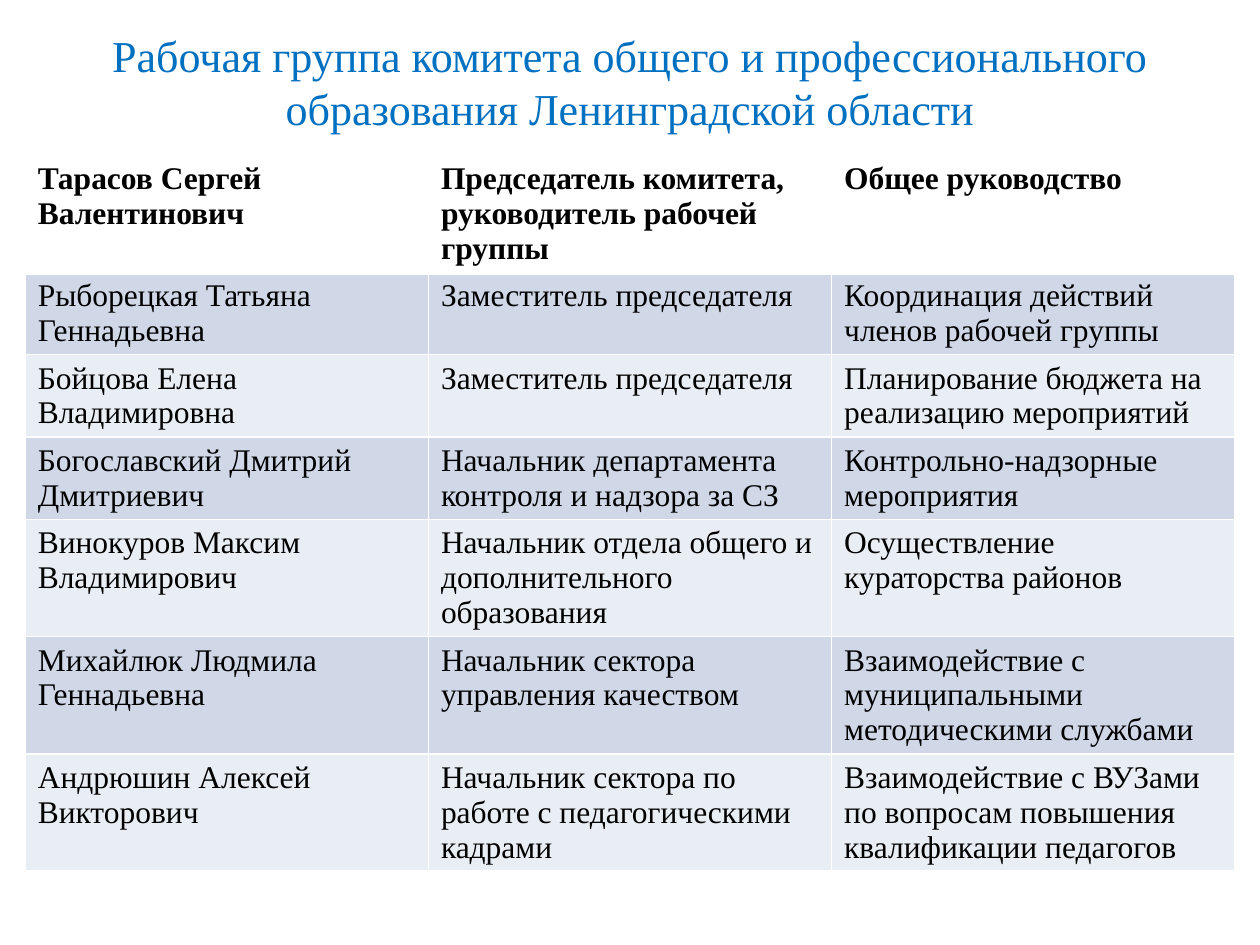
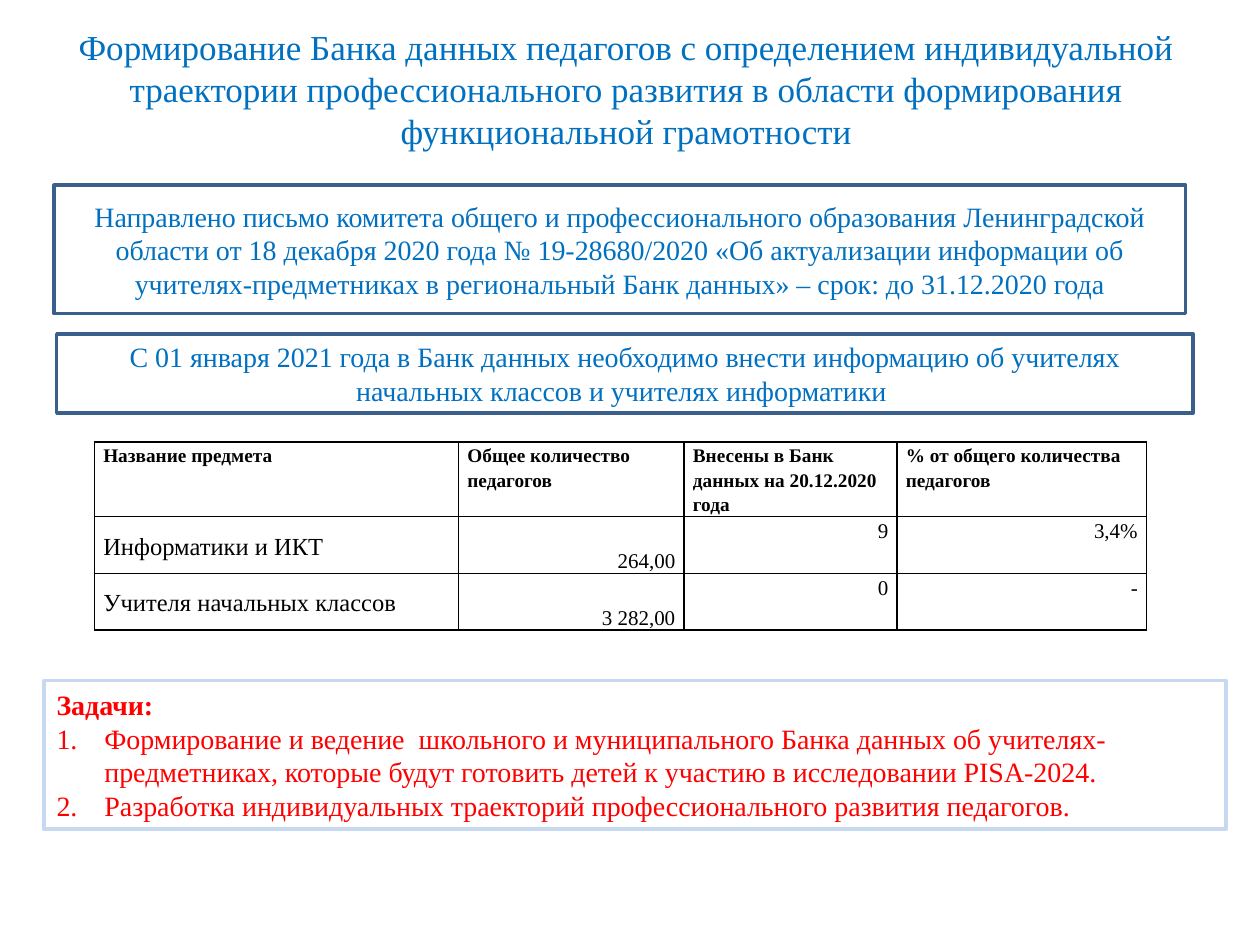
from dataclasses import dataclass

from lxml.etree import SubElement
from pptx import Presentation
from pptx.dml.color import RGBColor as RGB
from pptx.enum.shapes import MSO_SHAPE as Shape
from pptx.enum.text import MSO_ANCHOR as Anchor, PP_ALIGN as Align
from pptx.oxml.ns import qn
from pptx.util import Inches, Pt


@dataclass(frozen=True)
class Theme:
    """Colours, font and type sizes of the deck."""
    font: str = "Times New Roman"
    blue: str = "0070C0"
    edge: str = "3A5F8C"
    pale: str = "C6D9F1"
    red: str = "FF0000"
    black: str = "000000"
    white: str = "FFFFFF"
    bands: tuple = ("E9EDF4", "D0D8E8")
    title: float = 25.2
    long: float = 20
    body: float = 16
    team: float = 18
    head: float = 11
    name: float = 14
    count: float = 12


THEME = Theme()

TEAM = [
    ("Тарасов Сергей Валентинович",
     "Председатель комитета, руководитель рабочей группы", "Общее руководство"),
    ("Рыборецкая Татьяна Геннадьевна", "Заместитель председателя",
     "Координация действий членов рабочей группы"),
    ("Бойцова Елена Владимировна", "Заместитель председателя",
     "Планирование бюджета на реализацию мероприятий"),
    ("Богославский Дмитрий Дмитриевич",
     "Начальник департамента контроля и надзора за СЗ",
     "Контрольно-надзорные мероприятия"),
    ("Винокуров Максим Владимирович",
     "Начальник отдела общего и дополнительного образования",
     "Осуществление кураторства районов"),
    ("Михайлюк Людмила Геннадьевна", "Начальник сектора управления качеством",
     "Взаимодействие с муниципальными методическими службами"),
    ("Андрюшин Алексей Викторович",
     "Начальник сектора по работе с педагогическими кадрами",
     "Взаимодействие с ВУЗами по вопросам повышения квалификации педагогов"),
]

COUNTS = [
    ("Название предмета", "Общее количество педагогов",
     "Внесены в Банк данных на 20.12.2020 года",
     "% от общего количества педагогов"),
    ("Информатики и ИКТ", "264,00", "9", "3,4%"),
    ("Учителя начальных классов", "3 282,00", "0", "-"),
]

TASKS = [
    "Формирование и ведение  школьного и муниципального Банка данных об "
    "учителях-предметниках, которые будут готовить детей к участию в "
    "исследовании PISA-2024.",
    "Разработка индивидуальных траекторий профессионального развития педагогов.",
]


def write(para, text, size, color=THEME.black, bold=False, align=Align.LEFT,
          space=None, number=False):
    """Fill a paragraph with formatted text."""
    if number:
        props = para._p.get_or_add_pPr()
        props.set("marL", str(Inches(0.38)))
        props.set("indent", str(Inches(-0.38)))
        SubElement(props, qn("a:buFont"), typeface="+mj-lt")
        SubElement(props, qn("a:buAutoNum"), type="arabicPeriod")
    para.alignment = align
    if space:
        para.line_spacing = space
    run = para.add_run()
    run.text = text
    font = run.font
    font.name, font.size, font.bold = THEME.font, Pt(size), bold
    font.color.rgb = RGB.from_string(color)


def add_slide(deck, text, left, top, size):
    """Add a slide with a placed title."""
    slide = deck.slides.add_slide(deck.slide_layouts[5])
    title = slide.shapes.title
    title.left, title.top = Inches(left), Inches(top)
    title.width, title.height = Inches(9), Inches(0.69)
    title.text_frame.vertical_anchor = Anchor.MIDDLE
    write(title.text_frame.paragraphs[0], text, size, THEME.blue,
          align=Align.CENTER)
    return slide


def add_box(slide, left, top, width, height, edge):
    """Add an outlined white box and return its text frame."""
    box = slide.shapes.add_shape(Shape.RECTANGLE, Inches(left), Inches(top),
                                 Inches(width), Inches(height))
    box.shadow.inherit = False
    box.fill.solid()
    box.fill.fore_color.rgb = RGB.from_string(THEME.white)
    box.line.color.rgb = RGB.from_string(edge)
    box.line.width = Pt(2)
    frame = box.text_frame
    frame.word_wrap = True
    frame.vertical_anchor = Anchor.MIDDLE
    return frame


def add_note(slide, text, *place):
    """Add a box with one centred blue paragraph."""
    frame = add_box(slide, *place, THEME.edge)
    write(frame.paragraphs[0], text, THEME.body, THEME.blue,
          align=Align.CENTER)


def add_grid(slide, left, top, cols, rows):
    """Add a table with given column widths and row heights."""
    grid = slide.shapes.add_table(len(rows), len(cols), Inches(left), Inches(top),
                                  Inches(sum(cols)), Inches(sum(rows))).table
    for col, width in zip(grid.columns, cols):
        col.width = Inches(width)
    for row, height in zip(grid.rows, rows):
        row.height = Inches(height)
    return grid


def paint(cell, fill, color, **widths):
    """Give a cell its borders and its fill."""
    props = cell._tc.get_or_add_tcPr()
    for side in "LRTB":
        line = SubElement(props, qn(f"a:ln{side}"),
                          w=str(Pt(widths.get(side, 1))))
        SubElement(SubElement(line, qn("a:solidFill")), qn("a:srgbClr"),
                   val=color)
    if fill:
        cell.fill.solid()
        cell.fill.fore_color.rgb = RGB.from_string(fill)
    else:
        cell.fill.background()


def add_team(slide):
    """Add the banded table of group members."""
    grid = add_grid(slide, 0.2, 1.23, [3.2] * 3,
                    [0.93] + [0.65] * 3 + [0.93] * 3)
    for i, row in enumerate(TEAM):
        fill = THEME.bands[i % 2] if i else THEME.white
        edges = {0: {"B": 3}, 1: {"T": 3}}.get(i, {})
        for j, text in enumerate(row):
            cell = grid.cell(i, j)
            paint(cell, fill, THEME.white, **edges)
            write(cell.text_frame.paragraphs[0], text, THEME.team, bold=i == 0)


def add_counts(slide):
    """Add the ruled table of teacher counts."""
    grid = add_grid(slide, 0.75, 3.51, [2.89, 1.79, 1.69, 1.98],
                    [0.59, 0.45, 0.45])
    anchors = [Anchor.MIDDLE, Anchor.BOTTOM, Anchor.TOP, Anchor.TOP]
    for i, row in enumerate(COUNTS):
        for j, text in enumerate(row):
            cell = grid.cell(i, j)
            paint(cell, THEME.white if j else None, THEME.black)
            cell.margin_left = cell.margin_right = Inches(0.07)
            cell.margin_top = cell.margin_bottom = 0
            cell.vertical_anchor = anchors[j] if i else Anchor.TOP
            size = THEME.count if j else THEME.name
            write(cell.text_frame.paragraphs[0], text,
                  size if i else THEME.head, bold=i == 0, space=1.15,
                  align=Align.RIGHT if i and j else Align.LEFT)


def add_tasks(slide):
    """Add the box with the numbered tasks."""
    frame = add_box(slide, 0.35, 5.4, 9.38, 1.18, THEME.pale)
    write(frame.paragraphs[0], "Задачи:", THEME.body, THEME.red, bold=True)
    for task in TASKS:
        write(frame.add_paragraph(), task, THEME.body, THEME.red, number=True)


def main():
    """Build and save the deck."""
    deck = Presentation()
    deck.slide_width, deck.slide_height = Inches(10), Inches(7.5)

    group = add_slide(deck, "Рабочая группа комитета общего и профессионального "
                      "образования Ленинградской области", 0.5, 0.3, THEME.title)
    add_team(group)

    bank = add_slide(deck, "Формирование Банка данных педагогов с определением "
                     "индивидуальной траектории профессионального развития в "
                     "области формирования функциональной грамотности",
                     0.47, 0.36, THEME.long)
    add_note(bank, "Направлено письмо комитета общего и профессионального "
             "образования Ленинградской области от 18 декабря 2020 года "
             "№ 19-28680/2020 «Об актуализации информации об "
             "учителях-предметниках в региональный Банк данных» – срок: "
             "до 31.12.2020 года", 0.43, 1.47, 8.98, 1.02)
    add_note(bank, "С 01 января 2021 года в Банк данных необходимо внести "
             "информацию об учителях начальных классов и учителях "
             "информатики ", 0.45, 2.65, 9.02, 0.63)
    add_counts(bank)
    add_tasks(bank)
    deck.save("out.pptx")


if __name__ == "__main__":
    main()
